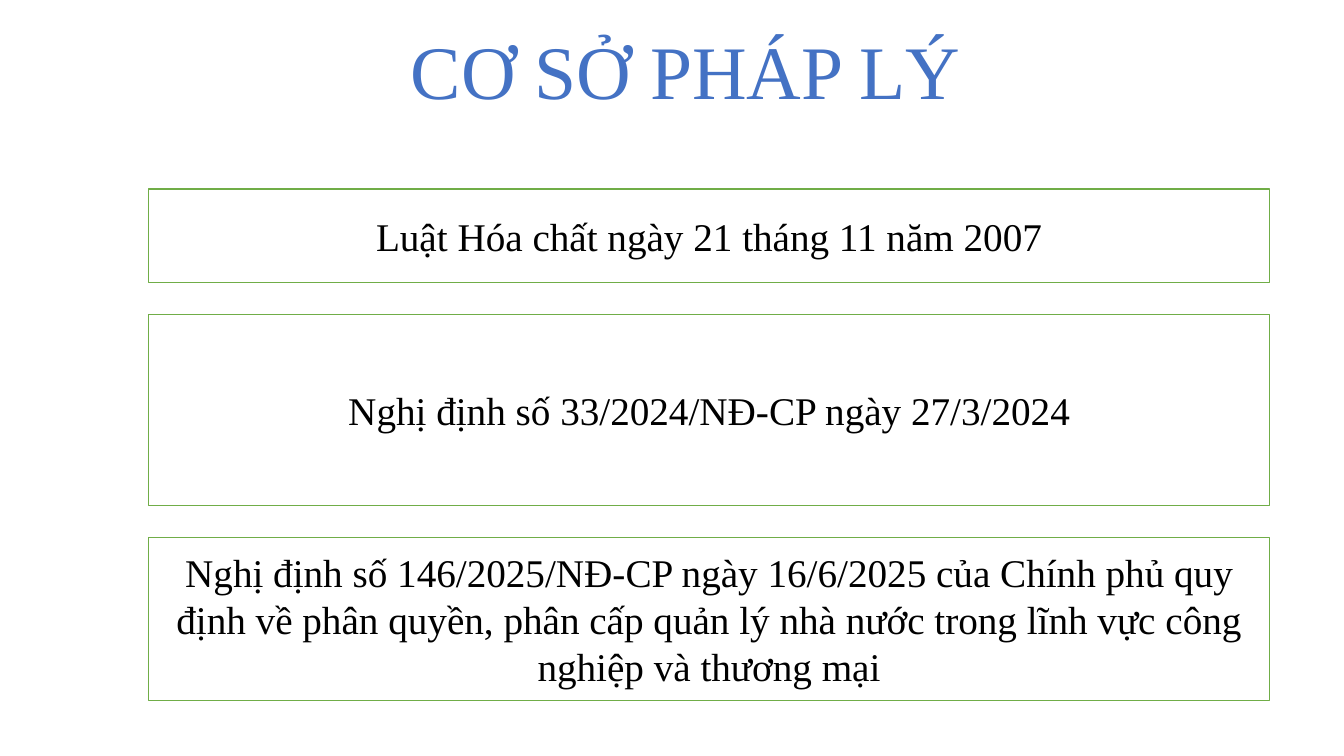
"""Build the legal basis slide: a title above three framed documents."""
from dataclasses import dataclass

import pptx
import pptx.dml.color
import pptx.enum.shapes
import pptx.enum.text
import pptx.shapes.autoshape
import pptx.slide
import pptx.text.text
import pptx.util

Pt = pptx.util.Pt
RGBColor = pptx.dml.color.RGBColor
Anchor = pptx.enum.text.MSO_ANCHOR

BLUE = RGBColor(0x44, 0x72, 0xC4)
GREEN = RGBColor(0x70, 0xAD, 0x47)
BLACK = RGBColor(0, 0, 0)
WHITE = RGBColor(0xFF, 0xFF, 0xFF)
FONT = "Times New Roman"

LEFT, TOP, WIDTH, GAP = 106, 135, 801, 22.5


@dataclass
class Decree:
    text: str
    height: float


DECREES = [
    Decree("Luật Hóa chất ngày 21 tháng 11 năm 2007", 67),
    Decree("Nghị định số 33/2024/NĐ-CP ngày 27/3/2024", 136.8),
    Decree("Nghị định số 146/2025/NĐ-CP ngày 16/6/2025 của Chính phủ quy "
           "định về phân quyền, phân cấp quản lý nhà nước trong lĩnh vực "
           "công nghiệp và thương mại", 116.6),
]


def write(frame: pptx.text.text.TextFrame, text: str, size: float,
          color: RGBColor, anchor: Anchor) -> None:
    frame.word_wrap = True
    frame.vertical_anchor = anchor
    line = frame.paragraphs[0]
    line.alignment = pptx.enum.text.PP_ALIGN.CENTER
    line.line_spacing = 1.0
    run = line.add_run()
    run.text = text
    run.font.name = FONT
    run.font.size = Pt(size)
    run.font.color.rgb = color


def add_title(slide: pptx.slide.Slide) -> None:
    title = slide.shapes.title
    title.left, title.top = Pt(199.5), Pt(13.7)
    title.width, title.height = Pt(580.3), Pt(72.7)
    write(title.text_frame, "CƠ SỞ PHÁP LÝ", 54, BLUE, Anchor.TOP)
    title.text_frame.auto_size = pptx.enum.text.MSO_AUTO_SIZE.SHAPE_TO_FIT_TEXT


def add_box(slide: pptx.slide.Slide, decree: Decree,
            top: float) -> pptx.shapes.autoshape.Shape:
    box = slide.shapes.add_shape(
        pptx.enum.shapes.MSO_SHAPE.RECTANGLE,
        Pt(LEFT), Pt(top), Pt(WIDTH), Pt(decree.height))
    box.shadow.inherit = False
    box.fill.solid()
    box.fill.fore_color.rgb = WHITE
    box.line.color.rgb = GREEN
    box.line.width = Pt(1)
    write(box.text_frame, decree.text, 28, BLACK, Anchor.MIDDLE)
    return box


def main() -> None:
    deck = pptx.Presentation()
    deck.slide_width, deck.slide_height = Pt(960), Pt(540)
    slide = deck.slides.add_slide(deck.slide_layouts.get_by_name("Title Only"))
    add_title(slide)
    top = TOP
    for decree in DECREES:
        add_box(slide, decree, top)
        top += decree.height + GAP
    deck.save("out.pptx")


if __name__ == "__main__":
    main()
